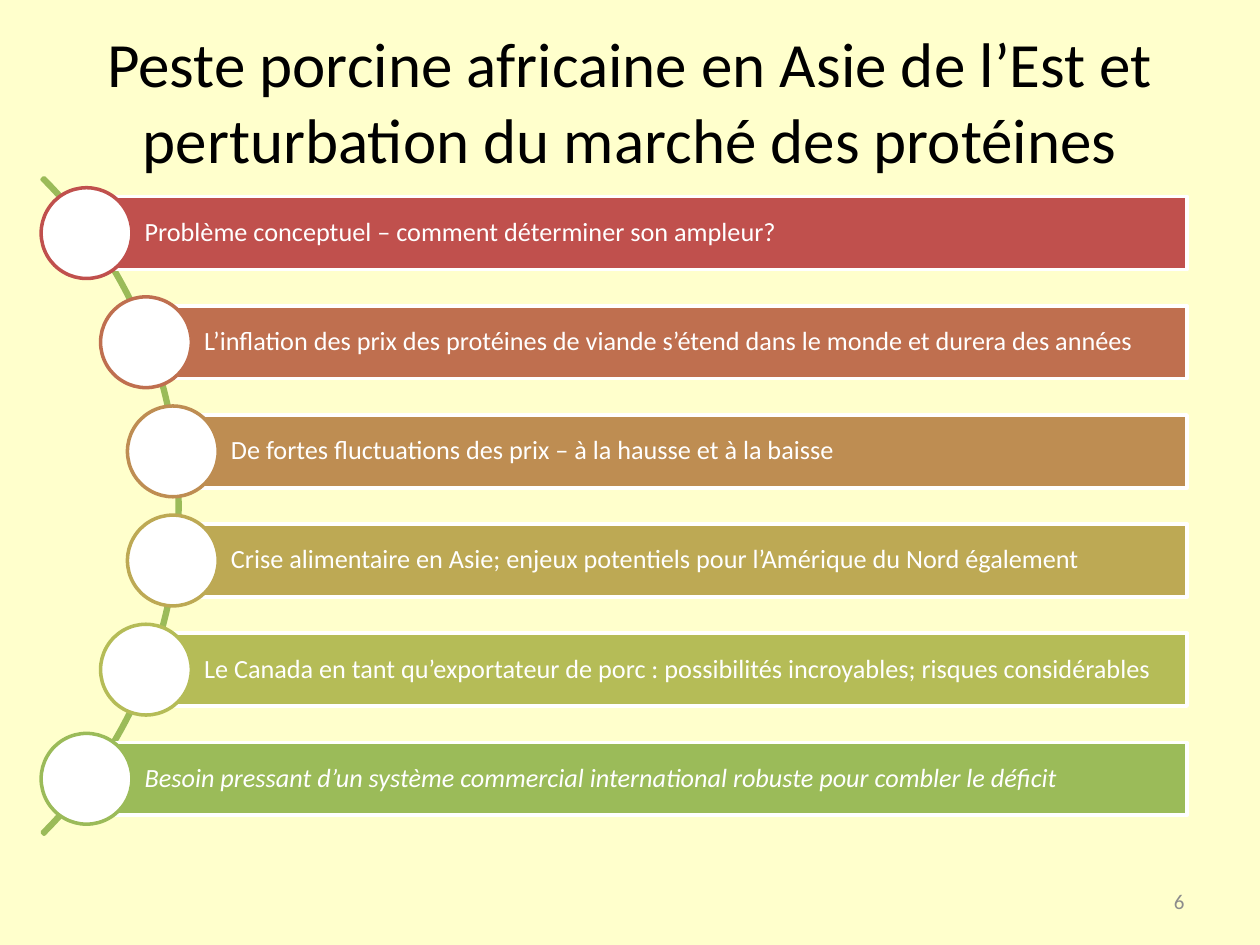
from dataclasses import dataclass
from math import sqrt

from pptx import Presentation
from pptx.dml.color import RGBColor
from pptx.enum.shapes import MSO_SHAPE
from pptx.enum.text import MSO_ANCHOR, MSO_AUTO_SIZE, PP_ALIGN
from pptx.util import Cm, Pt


@dataclass(frozen=True)
class Theme:
    font: str = "Calibri"
    background: str = "FFFFCC"
    white: str = "FFFFFF"
    black: str = "000000"
    grey: str = "8C8C8C"
    arc: str = "9BBB59"
    title_size: int = 36
    row_size: int = 15
    number_size: int = 12
    line_width: int = 2


THEME = Theme()
TITLE = "Peste porcine africaine en Asie de l’Est et perturbation du marché des protéines"
# text, colour, italic
ROWS = [
    ("Problème conceptuel – comment déterminer son ampleur?", "C0504D", False),
    ("L’inflation des prix des protéines de viande s’étend dans le monde et durera des années",
     "BF6F4F", False),
    ("De fortes fluctuations des prix – à la hausse et à la baisse", "BE8D52", False),
    ("Crise alimentaire en Asie; enjeux potentiels pour l’Amérique du Nord également",
     "BDA954", False),
    ("Le Canada en tant qu’exportateur de porc : possibilités incroyables; risques considérables",
     "B5BC57", False),
    ("Besoin pressant d’un système commercial international robuste pour combler le déficit",
     "9BBB59", True),
]


def apply_format(target, values):
    for name, value in values.items():
        setattr(target, name, value)


def write_text(frame, text, size, color, align, italic=False, spacing=None, **frame_format):
    apply_format(frame, {"word_wrap": True, "auto_size": MSO_AUTO_SIZE.NONE,
                         "vertical_anchor": MSO_ANCHOR.MIDDLE, **frame_format})
    para = frame.paragraphs[0]
    apply_format(para, {"alignment": align, "line_spacing": spacing})
    span = para.add_run()
    span.text = text
    apply_format(span.font, {"name": THEME.font, "size": Pt(size), "italic": italic})
    span.font.color.rgb = RGBColor.from_string(color)


def add_outlined(shapes, preset, box, fill, line):
    shape = shapes.add_shape(preset, *(Cm(length) for length in box))
    shape.shadow.inherit = False
    if fill:
        shape.fill.solid()
        shape.fill.fore_color.rgb = RGBColor.from_string(fill)
    else:
        shape.fill.background()
    shape.line.color.rgb = RGBColor.from_string(line)
    shape.line.width = Pt(THEME.line_width)
    return shape


def place_title(page, left, top, width, height):
    title = page.shapes.title
    apply_format(title, {"left": Cm(left), "top": Cm(top),
                         "width": Cm(width), "height": Cm(height)})
    write_text(title.text_frame, TITLE, THEME.title_size, THEME.black, PP_ALIGN.CENTER)


def add_row(shapes, center_x, center_y, right, row):
    """Add a bar that starts at the center of its circle."""
    text, color, italic = row
    bar_height, diameter = 1.47, 1.83
    bar = add_outlined(shapes, MSO_SHAPE.RECTANGLE,
                       (center_x, center_y - bar_height / 2, right - center_x, bar_height),
                       color, THEME.white)
    write_text(bar.text_frame, text, THEME.row_size, THEME.white, PP_ALIGN.LEFT, italic, 0.9,
               margin_left=Cm(1.17), margin_right=Cm(0.1),
               margin_top=Cm(0.1), margin_bottom=Cm(0.1))
    add_outlined(shapes, MSO_SHAPE.OVAL,
                 (center_x - diameter / 2, center_y - diameter / 2, diameter, diameter),
                 THEME.white, color)


def add_curved_list(page, left, top, width, height):
    """Spread the rows evenly down a quarter arc that bulges to the right."""
    shapes = page.shapes.add_group_shape().shapes
    arc_radius, row_radius, pitch = 9.36, 9.28, 2.2
    arc_x, arc_y = left - 6.57, top + height / 2
    arc = add_outlined(shapes, MSO_SHAPE.BLOCK_ARC,
                       (arc_x - arc_radius, arc_y - arc_radius, 2 * arc_radius, 2 * arc_radius),
                       None, THEME.arc)
    # Start and end angles (315° and 45°) in units of 100000/60000 degrees, then thickness
    for index, value in enumerate((189, 27, 0.003)):
        arc.adjustments[index] = value
    for index, row in enumerate(ROWS):
        offset = (index - (len(ROWS) - 1) / 2) * pitch
        center_x = arc_x + sqrt(row_radius ** 2 - offset ** 2)
        add_row(shapes, center_x, arc_y + offset, left + width, row)


def add_page_number(page, left, top, width, height):
    box = page.shapes.add_textbox(Cm(left), Cm(top), Cm(width), Cm(height))
    write_text(box.text_frame, "6", THEME.number_size, THEME.grey, PP_ALIGN.RIGHT)


def main():
    deck = Presentation()
    deck.slide_width, deck.slide_height = Cm(25.4), Cm(19.05)
    page = deck.slides.add_slide(deck.slide_layouts.get_by_name("Title Only"))
    page.background.fill.solid()
    page.background.fill.fore_color.rgb = RGBColor.from_string(THEME.background)
    place_title(page, 1.27, 0.43, 22.86, 3.18)
    add_curved_list(page, 0.84, 3.79, 23.09, 12.82)
    add_page_number(page, 18.2, 17.66, 5.93, 1.01)
    deck.save("out.pptx")


if __name__ == "__main__":
    main()
